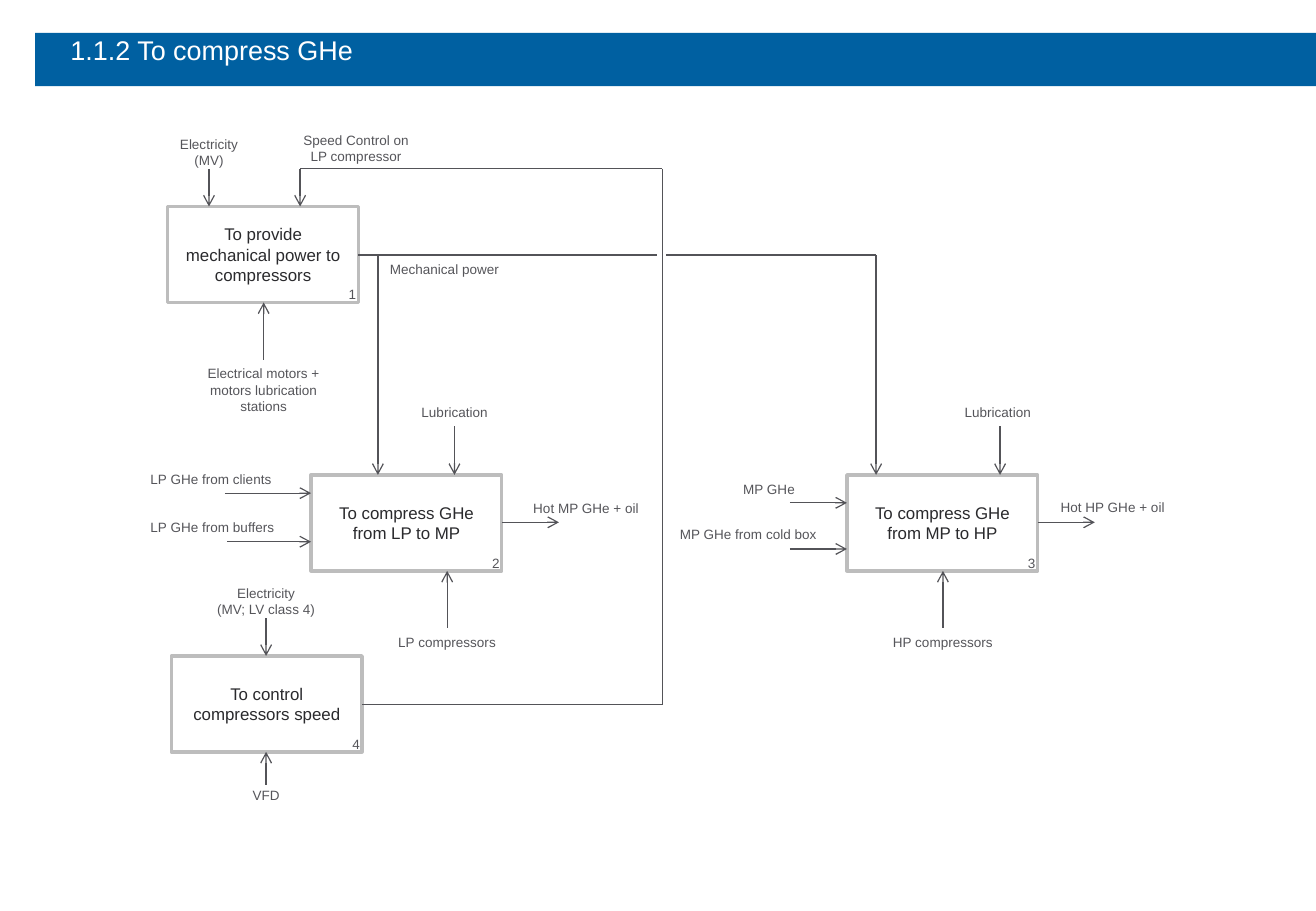
from lxml.etree import SubElement
from pptx import Presentation
from pptx.dml.color import RGBColor
from pptx.enum.shapes import MSO_CONNECTOR, MSO_SHAPE
from pptx.enum.text import MSO_ANCHOR, PP_ALIGN
from pptx.oxml.ns import qn
from pptx.util import Inches, Pt

COLORS = {"band": "0060A1", "white": "FFFFFF", "edge": "BDBDBD",
          "line": "535358", "label": "55555A", "box": "2A2A2D"}
LEFT, CENTER, RIGHT = PP_ALIGN.LEFT, PP_ALIGN.CENTER, PP_ALIGN.RIGHT
WIDE, HIGH = 1.57, 0.79  # size of every function box

# Arrows: side, place along that side, length.
# Labels: text, offset from the box's top left corner, width, alignment.
BLOCKS = [
    {"name": "To provide mechanical power to compressors", "number": "1",
     "at": (1.38, 1.7),
     "arrows": [("top", 0.34, 0.31), ("bottom", 0.79, 0.47)],
     "labels": [("Electricity\n(MV)", -0.29, -0.63, 1.26, CENTER),
                ("Speed Control on LP compressor", 0.96, -0.66, 1.18, CENTER),
                ("Electrical motors + motors lubrication stations",
                 0.16, 1.26, 1.26, CENTER),
                ("Mechanical power", 1.73, 0.4, 1.26, LEFT)]},
    {"name": "To compress GHe from LP to MP", "number": "2",
     "at": (2.56, 3.91),
     "arrows": [("top", 1.18, 0.4), ("bottom", 1.12, 0.47),
                ("right", 0.39, 0.47), ("left", 0.15, 0.71),
                ("left", 0.55, 0.69)],
     "labels": [("Lubrication", 0.81, -0.63, 0.87, LEFT),
                ("LP compressors", 0.49, 1.26, 1.26, CENTER),
                ("Hot MP GHe + oil", 1.73, 0.16, 1.26, LEFT),
                ("LP GHe from clients", -1.42, -0.08, 1.26, LEFT),
                ("LP GHe from buffers", -1.42, 0.31, 1.26, LEFT)]},
    {"name": "To compress GHe from MP to HP", "number": "3",
     "at": (6.97, 3.91),
     "arrows": [("top", 1.26, 0.4), ("bottom", 0.79, 0.47),
                ("right", 0.39, 0.47), ("left", 0.23, 0.47),
                ("left", 0.61, 0.47)],
     "labels": [("Lubrication", 0.87, -0.63, 0.87, LEFT),
                ("HP compressors", 0.16, 1.26, 1.26, CENTER),
                ("Hot HP GHe + oil", 1.66, 0.15, 1.26, LEFT),
                ("MP GHe", -1, 0, 0.67, RIGHT),
                ("MP GHe from cold box", -1.49, 0.37, 1.34, RIGHT)]},
    {"name": "To control compressors speed", "number": "4",
     "at": (1.41, 5.4),
     "arrows": [("top", 0.78, 0.31), ("bottom", 0.78, 0.27)],
     "labels": [("Electricity\n(MV; LV class 4)", 0.15, -0.63, 1.26, CENTER),
                ("VFD", 0.15, 1.03, 1.26, CENTER)]},
]


def paint(key):
    return RGBColor.from_string(COLORS[key])


def write(shape, text, size, color, align):
    frame = shape.text_frame
    frame.word_wrap = True
    frame.text = text
    for para in frame.paragraphs:
        para.alignment = align
        for run in para.runs:
            run.font.name = "Arial"
            run.font.size = Pt(size)
            run.font.color.rgb = paint(color)
    return frame


def label(slide, text, left, top, width, align):
    box = slide.shapes.add_textbox(
        Inches(left), Inches(top), Inches(width), Inches(0.24))
    write(box, text, 8, "label", align)


def rect(slide, left, top, width, height, fill, edge=None):
    shape = slide.shapes.add_shape(
        MSO_SHAPE.RECTANGLE,
        Inches(left), Inches(top), Inches(width), Inches(height))
    shape.shadow.inherit = False
    shape.fill.solid()
    shape.fill.fore_color.rgb = paint(fill)
    if edge:
        shape.line.color.rgb = paint(edge)
        shape.line.width = Pt(2)
    else:
        shape.line.fill.background()
    return shape


def route(slide, *points, arrow=True):
    """Join the points with straight lines, the last one with an arrowhead."""
    for start, end in zip(points, points[1:]):
        line = slide.shapes.add_connector(
            MSO_CONNECTOR.STRAIGHT, *map(Inches, start + end))
        line.line.color.rgb = paint("line")
        line.line.width = Pt(0.75)
        props = line._element.spPr
        SubElement(props, qn("a:effectLst"))
        if arrow and end == points[-1]:
            SubElement(props.find(qn("a:ln")), qn("a:tailEnd"), type="arrow")


def header(slide, left, top, width, height):
    rect(slide, left, top, width, height, "band")
    title = slide.shapes.add_textbox(
        Inches(left + 0.29), Inches(top + 0.01), Inches(9.75), Inches(0.39))
    frame = write(title, "1.1.2 To compress GHe", 16, "white", LEFT)
    frame.margin_left = frame.margin_right = 0
    frame.margin_top = frame.margin_bottom = 0


def block(slide, name, number, at, arrows, labels):
    """Draw a numbered function box with its own arrows and labels."""
    left, top = at
    right, bottom = left + WIDE, top + HIGH
    shape = rect(slide, left, top, WIDE, HIGH, "white", "edge")
    frame = write(shape, name, 10, "box", CENTER)
    frame.vertical_anchor = MSO_ANCHOR.MIDDLE
    label(slide, number, right - 0.42, top + 0.61, 0.5, RIGHT)
    for side, along, size in arrows:
        x, y = left + along, top + along
        ends = {"top": ((x, top - size), (x, top)),
                "bottom": ((x, bottom + size), (x, bottom)),
                "left": ((left - size, y), (left, y)),
                "right": ((right, y), (right + size, y))}
        route(slide, *ends[side])
    for text, x, y, width, align in labels:
        label(slide, text, left + x, top + y, width, align)


def flows(slide, power, lower, upper, speed):
    """Link the boxes, given the top left corner of each."""
    mid = power[1] + 0.4
    out, drop, turn = power[0] + WIDE, lower[0] + 0.55, upper[0] + 0.24
    route(slide, (out, mid), (turn, mid), (turn, upper[1]))
    route(slide, (drop, mid), (drop, lower[1]))
    riser, inlet = 5.45, power[0] + 1.09
    rect(slide, riser - 0.03, mid - 0.16, 0.05, 0.31, "white", "white")
    base, roof = speed[1] + 0.4, power[1] - 0.31
    route(slide, (speed[0] + WIDE, base), (riser, base), (riser, roof),
          (inlet, roof), (inlet, power[1]))


def main():
    deck = Presentation()
    deck.slide_width, deck.slide_height = Inches(10.83), Inches(7.5)
    slide = deck.slides.add_slide(deck.slide_layouts[6])
    header(slide, 0.29, 0.27, 10.54, 0.44)
    for item in BLOCKS:
        block(slide, **item)
    flows(slide, *(item["at"] for item in BLOCKS))
    deck.save("out.pptx")


if __name__ == "__main__":
    main()
